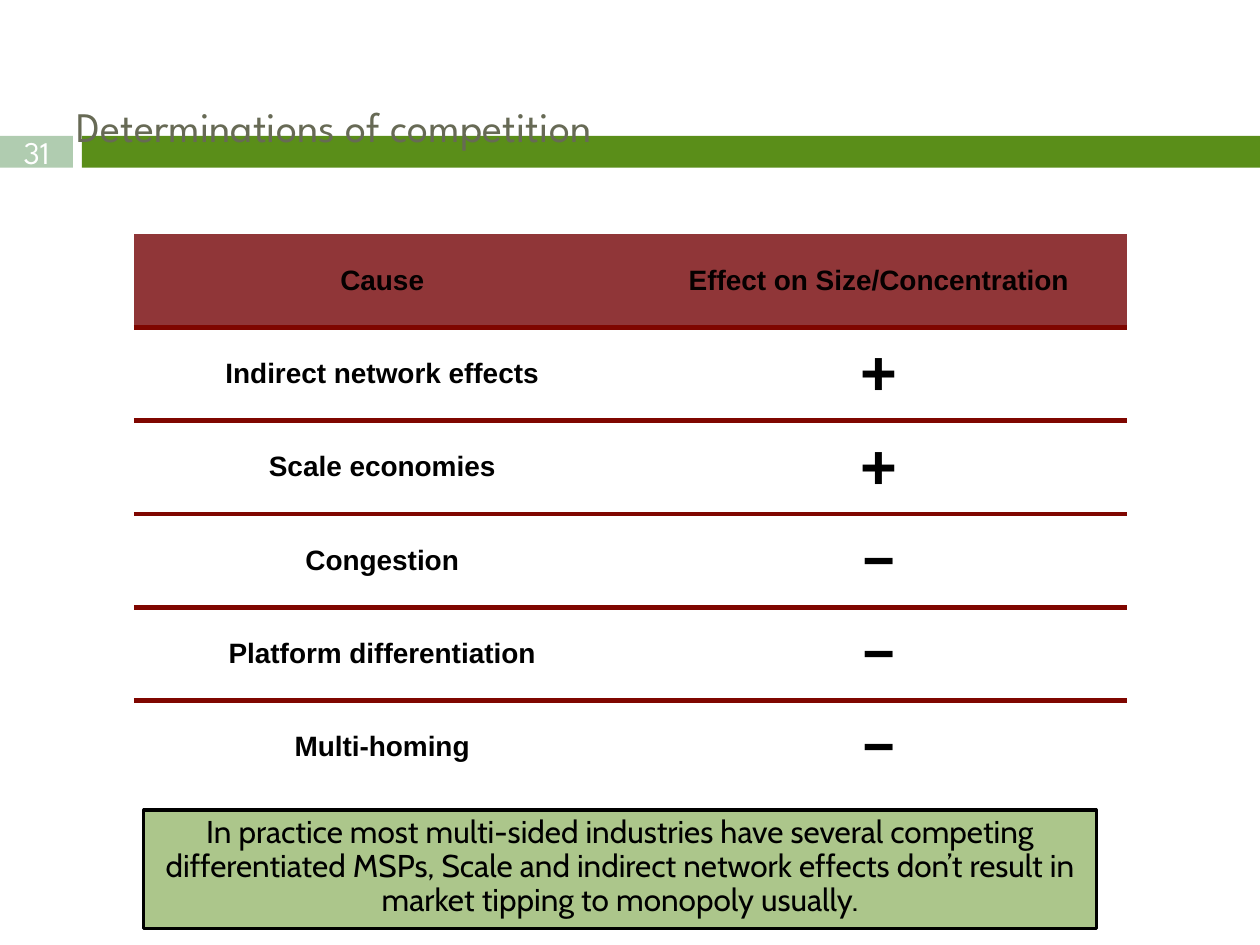
from lxml.etree import SubElement
from pptx import Presentation
from pptx.dml.color import RGBColor
from pptx.enum.shapes import MSO_SHAPE
from pptx.enum.text import MSO_ANCHOR, PP_ALIGN
from pptx.oxml import parse_xml
from pptx.oxml.ns import nsdecls, qn
from pptx.util import Cm, Pt


def color(value):
    return RGBColor.from_string(value)


def write(text_frame, text, font_name, size, font_color, align=PP_ALIGN.CENTER):
    text_frame.word_wrap = True
    paragraph = text_frame.paragraphs[0]
    paragraph.text = text
    paragraph.alignment = align
    paragraph.font.name = font_name
    paragraph.font.size = Pt(size)
    paragraph.font.color.rgb = color(font_color)
    return paragraph


presentation = Presentation()
presentation.slide_width, presentation.slide_height = Cm(25.4), Cm(19.05)
slide = presentation.slides.add_slide(presentation.slide_layouts[6])

rectangles = []
for left, top, width, height, fill in (
    (1.65, 2.74, 23.75, 0.64, "5A8E19"),
    (0, 2.74, 1.47, 0.64, "B0CCB0"),
    (2.9, 16.33, 19.2, 2.39, "5A8E19"),
):
    shape = slide.shapes.add_shape(
        MSO_SHAPE.RECTANGLE, Cm(left), Cm(top), Cm(width), Cm(height)
    )
    shape.shadow.inherit = False
    shape.fill.solid()
    shape.fill.fore_color.rgb = color(fill)
    shape.line.fill.background()
    rectangles.append(shape)
title_bar, number_box, conclusion = rectangles
title_bar.width = presentation.slide_width - title_bar.left

number_frame = number_box.text_frame
number_frame.margin_left = number_frame.margin_right = 0
number_frame.margin_top = number_frame.margin_bottom = 0
number_frame.vertical_anchor = MSO_ANCHOR.MIDDLE
write(number_frame, "31", "League Spartan", 18, "FFFFFF")

title = slide.shapes.add_textbox(Cm(1.3), Cm(1.9), Cm(22.73), Cm(2.54))
write(title.text_frame, "Determinations of competition", "League Spartan", 24,
      "676A55", PP_ALIGN.LEFT)

rows = [
    ("Cause", "Effect on Size/Concentration"),
    ("Indirect network effects", "+"),
    ("Scale economies", "+"),
    ("Congestion", "–"),
    ("Platform differentiation", "–"),
    ("Multi-homing", "–"),
]
table = slide.shapes.add_table(
    len(rows), 2, Cm(2.7), Cm(4.72), Cm(20.02), Cm(1.88 * len(rows))
).table
for row_index, row in enumerate(rows):
    for column_index, text in enumerate(row):
        cell = table.cell(row_index, column_index)
        cell.vertical_anchor = MSO_ANCHOR.MIDDLE
        paragraph = write(
            cell.text_frame,
            text,
            "Courier New" if text == "–" else "Arial",
            36 if text in "+–" else 16,
            "050000" if row_index == 0 else "000000",
        )
        paragraph.font.bold = True
        if row_index == 0:
            cell.fill.solid()
            cell.fill.fore_color.rgb = color("903638")
        else:
            cell.fill.background()
        ruled = {"lnT": row_index > 0, "lnB": row_index < len(rows) - 1}
        for position, side in enumerate(("lnL", "lnR", "lnT", "lnB")):
            if ruled.get(side):
                paint = '<a:solidFill><a:srgbClr val="7F0600"/></a:solidFill>'
            else:
                paint = "<a:noFill/>"
            border = f'<a:{side} {nsdecls("a")} w="{Pt(3)}">{paint}</a:{side}>'
            cell._tc.get_or_add_tcPr().insert(position, parse_xml(border))

fill_color = conclusion._element.spPr.find(qn("a:solidFill")).find(qn("a:srgbClr"))
SubElement(fill_color, qn("a:alpha"), val="50000")
conclusion.line.color.rgb = color("000000")
conclusion.line.width = Pt(1.75)
conclusion.text_frame.vertical_anchor = MSO_ANCHOR.TOP
paragraph = write(
    conclusion.text_frame,
    "In practice most multi-sided industries have several competing differentiated "
    "MSPs, Scale and indirect network effects don’t result in market tipping to "
    "monopoly usually.",
    "Cabin", 18, "000000",
)
paragraph.line_spacing = 0.9

presentation.save("out.pptx")
